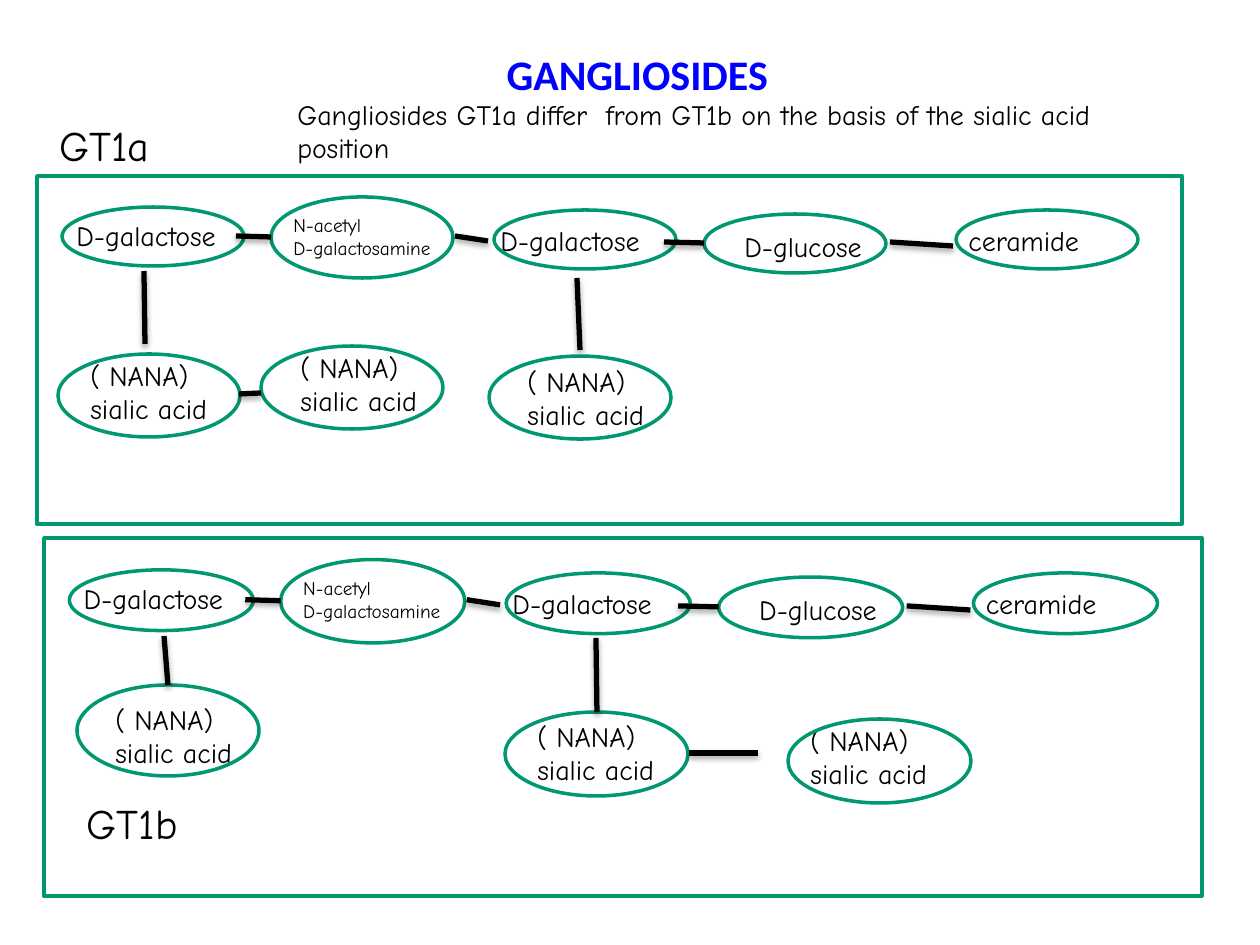
"""Build a slide that compares the sugar chains of gangliosides GT1a and GT1b."""
import pptx
import pptx.dml.color
import pptx.enum.shapes
import pptx.enum.text
import pptx.oxml
import pptx.oxml.ns
import pptx.util

PX = 914400 / 126
BLACK = pptx.dml.color.RGBColor(0, 0, 0)
WHITE = pptx.dml.color.RGBColor(255, 255, 255)
BLUE = pptx.dml.color.RGBColor(0, 0, 255)
GREEN = pptx.dml.color.RGBColor(0, 151, 113)
KIND = pptx.enum.shapes.MSO_SHAPE
SHADOW = (
    f'<a:effectLst {pptx.oxml.ns.nsdecls("a")}>'
    '<a:outerShdw blurRad="40000" dist="23000" dir="5400000" rotWithShape="0">'
    '<a:srgbClr val="000000"><a:alpha val="35000"/></a:srgbClr>'
    '</a:outerShdw></a:effectLst>'
)

BASE = (1145, 348)
CHAIN = [
    ("D-galactose", 16, (27, 36, 181, 81), (25, 31, 182, 59)),
    ("N-acetyl\nD-galactosamine", 11, (244, 31, 224, 59), (234, 21, 182, 81)),
    ("D-galactose", 16, (451, 41, 181, 47), (457, 34, 182, 59)),
    ("D-glucose", 16, (695, 47, 154, 47), (667, 38, 182, 59)),
    ("ceramide", 16, (919, 41, 304, 47), (919, 34, 182, 59)),
]
LINKS = [(199, 60, 234, 61), (418, 60, 451, 65),
         (627, 66, 667, 67), (853, 66, 916, 70)]
PANELS = [
    {
        "frame": (37, 176, 1145, 348),
        "name": ("GT1a", (47, 113, 630, 63)),
        "acids": [((78, 352), (58, 354, 182, 83)),
                  ((288, 344), (261, 346, 182, 83)),
                  ((515, 358), (489, 356, 182, 83))],
        "bonds": [(145, 344, 144, 271), (239, 394, 261, 393),
                  (580, 350, 577, 278)],
    },
    {
        "frame": (44, 538, 1158, 358),
        "name": ("GT1b", (74, 791, 638, 65)),
        "acids": [((103, 696), (77, 685, 182, 91)),
                  ((525, 713), (505, 712, 183, 84)),
                  ((798, 717), (788, 719, 183, 84))],
        "bonds": [(168, 685, 164, 636), (597, 712, 596, 638),
                  (758, 753, 689, 753)],
    },
]


def emu(box):
    """Turn pixel lengths into EMU."""
    return [pptx.util.Emu(round(v * PX)) for v in box]


def fit(frame, box, ends=False):
    """Scale a box, or the two ends of a line, from the base panel to a frame."""
    left, top, wide, high = frame
    sx, sy = wide / BASE[0], high / BASE[1]
    x, y, a, b = box[0] * sx, box[1] * sy, box[2] * sx, box[3] * sy
    return (left + x, top + y, a + left * ends, b + top * ends)


def write(shape, text, size=16, font="Comic Neue", color=BLACK, bold=False,
          wrap=True):
    """Put left-aligned text at the top of a shape, a paragraph per line."""
    frame = shape.text_frame
    frame.text = text
    frame.word_wrap = wrap
    frame.auto_size = pptx.enum.text.MSO_AUTO_SIZE.NONE
    frame.vertical_anchor = pptx.enum.text.MSO_ANCHOR.TOP
    for para in frame.paragraphs:
        para.alignment = pptx.enum.text.PP_ALIGN.LEFT
        para.font.size = pptx.util.Pt(size)
        para.font.name = font
        para.font.bold = bold
        para.font.color.rgb = color


def label(slide, text, box, **style):
    """Add text on a white rectangle."""
    shape = slide.shapes.add_shape(KIND.RECTANGLE, *emu(box))
    shape.shadow.inherit = False
    shape.fill.solid()
    shape.fill.fore_color.rgb = WHITE
    shape.line.fill.background()
    write(shape, text, **style)


def outline(slide, kind, box):
    """Add an unfilled shape with a green edge."""
    shape = slide.shapes.add_shape(kind, *emu(box))
    shape.shadow.inherit = False
    shape.fill.background()
    shape.line.color.rgb = GREEN
    shape.line.width = pptx.util.Pt(2)


def bond(slide, ends):
    """Add a thick black line with a soft shadow."""
    line = slide.shapes.add_connector(
        pptx.enum.shapes.MSO_CONNECTOR.STRAIGHT, *emu(ends))
    line.line.color.rgb = BLACK
    line.line.width = pptx.util.Pt(3)
    line._element.spPr.append(pptx.oxml.parse_xml(SHADOW))


def panel(slide, frame, name, acids, bonds):
    """Draw one ganglioside: its chain, sialic acids, frame and name."""
    for text, size, box, _ in CHAIN:
        label(slide, text, fit(frame, box), size=size, wrap="\n" in text)
    for spot, _ in acids:
        label(slide, "( NANA)\nsialic acid", (*spot, 160, 81))
    rings = [fit(frame, ring) for *_, ring in CHAIN]
    for ring in rings + [ring for _, ring in acids]:
        outline(slide, KIND.OVAL, ring)
    for ends in [fit(frame, link, ends=True) for link in LINKS] + bonds:
        bond(slide, ends)
    outline(slide, KIND.RECTANGLE, frame)
    text, box = name
    write(slide.shapes.add_textbox(*emu(box)), text, size=24)


def main():
    """Build and save the slide."""
    deck = pptx.Presentation()
    deck.slide_width = pptx.util.Inches(10)
    deck.slide_height = pptx.util.Inches(7.5)
    slide = deck.slides.add_slide(deck.slide_layouts[5])
    title = slide.shapes.title
    title.left, title.top, title.width, title.height = emu((494, 42, 290, 63))
    write(title, "GANGLIOSIDES", size=24, font="Calibri", color=BLUE,
          bold=True, wrap=False)
    label(slide, "Gangliosides GT1a differ  from GT1b on the basis of the "
          "sialic acid position", (285, 91, 898, 81))
    for item in PANELS:
        panel(slide, **item)
    deck.save("out.pptx")


if __name__ == "__main__":
    main()
